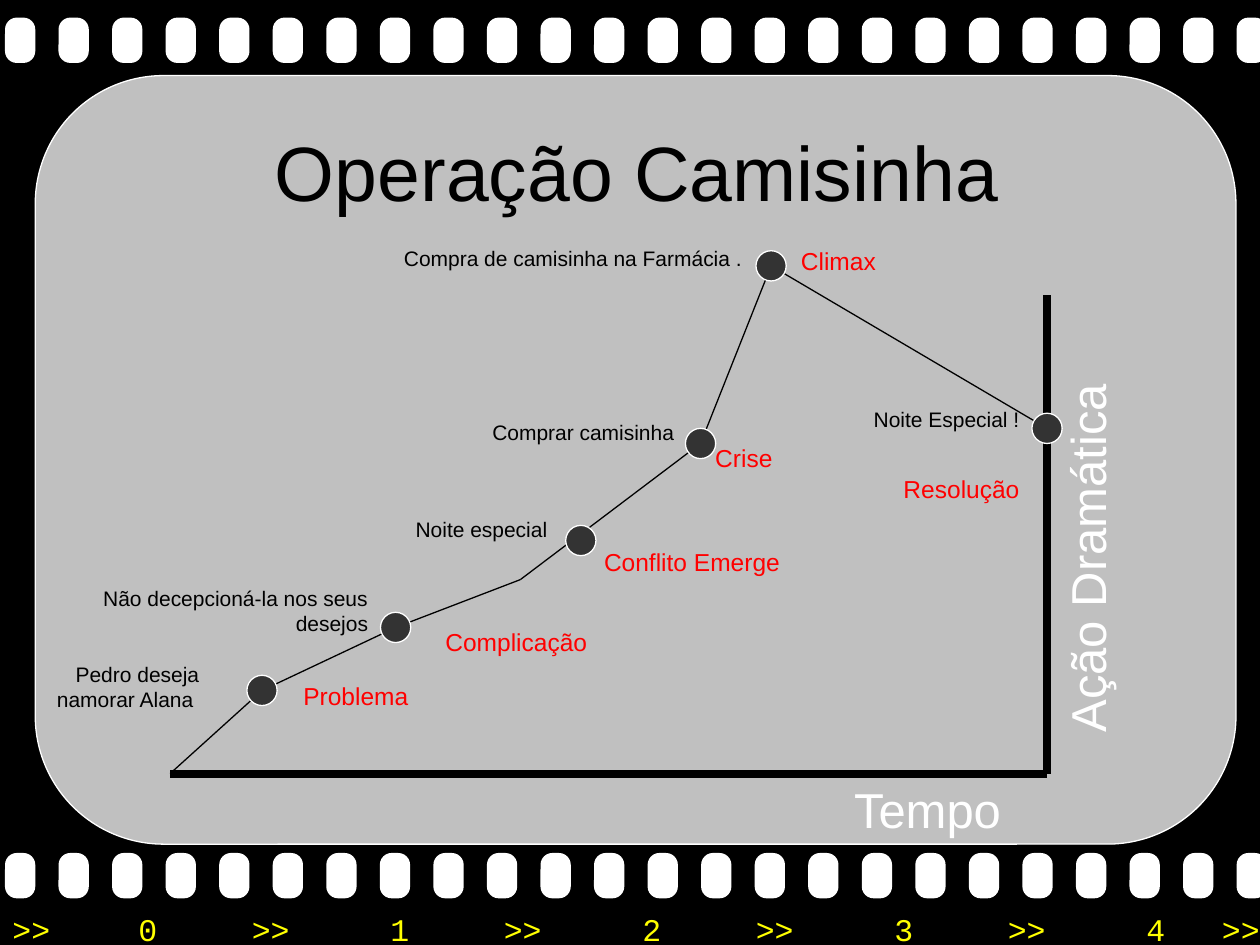
"""Builds a film-strip slide that plots a story's dramatic curve."""
from itertools import pairwise

from lxml import etree
from pptx import Presentation
from pptx.dml.color import RGBColor
from pptx.enum.shapes import MSO_CONNECTOR, MSO_SHAPE
from pptx.enum.text import MSO_ANCHOR, PP_ALIGN
from pptx.oxml.ns import qn
from pptx.util import Inches, Pt

STRAIGHT = MSO_CONNECTOR.STRAIGHT
ROUNDED = MSO_SHAPE.ROUNDED_RECTANGLE
OVAL = MSO_SHAPE.OVAL
LEFT, CENTER, RIGHT = PP_ALIGN.LEFT, PP_ALIGN.CENTER, PP_ALIGN.RIGHT
TOP, MIDDLE = MSO_ANCHOR.TOP, MSO_ANCHOR.MIDDLE

BLACK, WHITE, SILVER = "000000", "FFFFFF", "C0C0C0"
CHARCOAL, RED, YELLOW = "333333", "FF0000", "FFFF00"

HOLE_COUNT, HOLE_PITCH, HOLE_ROWS = 24, 0.425, (0.14, 6.77)
FRAME_MARKS = [">>", "0", ">>", "1", ">>", "2", ">>", "3", ">>", "4", ">>"]
FRAME_STOPS = [1, 1.9, 3, 3.9, 5, 5.9, 7, 7.9, 9, 9.6]

ORIGIN, CORNER, AXIS_TOP = (1.35, 6.14), (8.31, 6.14), (8.31, 2.34)
PROBLEM, COMPLICATION, CONFLICT = (2.08, 5.48), (3.14, 4.98), (4.61, 4.29)
CRISIS, CLIMAX, RESOLUTION = (5.56, 3.52), (6.12, 2.11), (8.31, 3.4)
BEND = (4.13, 4.6)
CURVE = [ORIGIN, PROBLEM, COMPLICATION, BEND, CRISIS, CLIMAX, RESOLUTION]
DOTS = [PROBLEM, COMPLICATION, CONFLICT, CRISIS, CLIMAX, RESOLUTION]
DOT_SIZE = 0.24

EVENTS = [
    ("Pedro deseja namorar Alana ", (0, 5.2, 1.68, 0.5)),
    ("Não decepcioná-la nos seus desejos", (0.47, 4.6, 2.55, 0.5)),
    ("Noite especial ", (0.98, 4.05, 3.51, 0.3)),
    ("Comprar camisinha", (1.06, 3.28, 4.39, 0.3)),
    ("Compra de camisinha na Farmácia .", (1.91, 1.9, 4.08, 0.3)),
    ("Noite Especial !", (6.24, 3.18, 1.95, 0.3)),
]
STAGES = [
    ("Problema", (2.2, 5.36, 1.14, 0.33)),
    ("Complicação", (3.26, 4.93, 1.5, 0.33)),
    ("Conflito Emerge", (4.49, 4.29, 1.8, 0.33)),
    ("Crise", (5.56, 3.47, 0.67, 0.33)),
    ("Climax", (6.24, 1.9, 0.81, 0.33)),
    ("Resolução", (7.05, 3.71, 1.14, 0.33)),
]


def color(value):
    """Turn a hex string into a colour."""
    return RGBColor.from_string(value)


def write(frame, text, size, ink=BLACK, font="Arial", align=LEFT, stops=()):
    """Write one formatted paragraph into a text frame."""
    para = frame.paragraphs[0]
    para.alignment = align
    if stops:
        tabs = etree.SubElement(para._p.get_or_add_pPr(), qn("a:tabLst"))
        for stop in stops:
            etree.SubElement(tabs, qn("a:tab"), pos=str(Inches(stop)), algn="l")
    span = para.add_run()
    span.text = text
    span.font.name = font
    span.font.size = Pt(size)
    span.font.color.rgb = color(ink)


class FilmSlide:
    """Hold the current slide and draw its elements."""

    def __init__(self, deck):
        """Add a blank slide with a black background."""
        self.page = deck.slides.add_slide(deck.slide_layouts[6])
        background = self.page.background.fill
        background.solid()
        background.fore_color.rgb = color(BLACK)

    def shape(self, kind, place, fill, outline=None, radius=None):
        """Draw a filled preset shape."""
        shape = self.page.shapes.add_shape(kind, *map(Inches, place))
        shape.shadow.inherit = False
        shape.fill.solid()
        shape.fill.fore_color.rgb = color(fill)
        if outline:
            shape.line.color.rgb = color(outline)
            shape.line.width = Pt(0.75)
        else:
            shape.line.fill.background()
        if radius is not None:
            shape.adjustments[0] = radius

    def line(self, start, end, width=0.75):
        """Draw a straight black line."""
        line = self.page.shapes.add_connector(STRAIGHT, *map(Inches, start + end))
        line.line.color.rgb = color(BLACK)
        line.line.width = Pt(width)
        etree.SubElement(line._element.spPr, qn("a:effectLst"))

    def text(self, text, place, size, anchor=TOP, rotation=0, **style):
        """Place a wrapped text box."""
        box = self.page.shapes.add_textbox(*map(Inches, place))
        box.rotation = rotation
        box.text_frame.word_wrap = True
        box.text_frame.vertical_anchor = anchor
        write(box.text_frame, text, size, **style)


def draw_film(slide):
    """Draw the frame, the perforations and the frame numbers."""
    slide.shape(ROUNDED, (0.28, 0.6, 9.53, 6.1), SILVER, WHITE, 0.167)
    for top in HOLE_ROWS:
        for index in range(HOLE_COUNT):
            left = 0.04 + index * HOLE_PITCH
            slide.shape(ROUNDED, (left, top, 0.24, 0.36), WHITE, radius=0.39)
    slide.text("\t".join(FRAME_MARKS), (0, 7.17, 10.2, 0.4), 18,
               ink=YELLOW, font="Courier New", stops=FRAME_STOPS)


def draw_curve(slide):
    """Draw the axes, the dramatic curve and its labels."""
    slide.text("Tempo", (6.68, 6.14, 1.62, 0.57), 28, ink=WHITE)
    slide.text("Ação Dramática", (6.84, 3.84, 3.57, 0.57), 28,
               rotation=270, ink=WHITE)
    for start, end in pairwise([ORIGIN, CORNER, AXIS_TOP]):
        slide.line(start, end, 4.5)
    for start, end in pairwise(CURVE):
        slide.line(start, end)
    for x, y in DOTS:
        place = (x - DOT_SIZE / 2, y - DOT_SIZE / 2, DOT_SIZE, DOT_SIZE)
        slide.shape(OVAL, place, CHARCOAL, WHITE)
    for labels, size, ink in ((EVENTS, 12, BLACK), (STAGES, 14, RED)):
        for label, place in labels:
            slide.text(label, place, size, ink=ink, align=RIGHT)


def main():
    """Build and save the deck."""
    deck = Presentation()
    deck.slide_width, deck.slide_height = Inches(10), Inches(7.5)
    slide = FilmSlide(deck)
    draw_film(slide)
    slide.text("Operação Camisinha ", (0.78, 0.88, 8.72, 0.95), 44,
               anchor=MIDDLE, align=CENTER)
    draw_curve(slide)
    deck.save("out.pptx")


if __name__ == "__main__":
    main()
